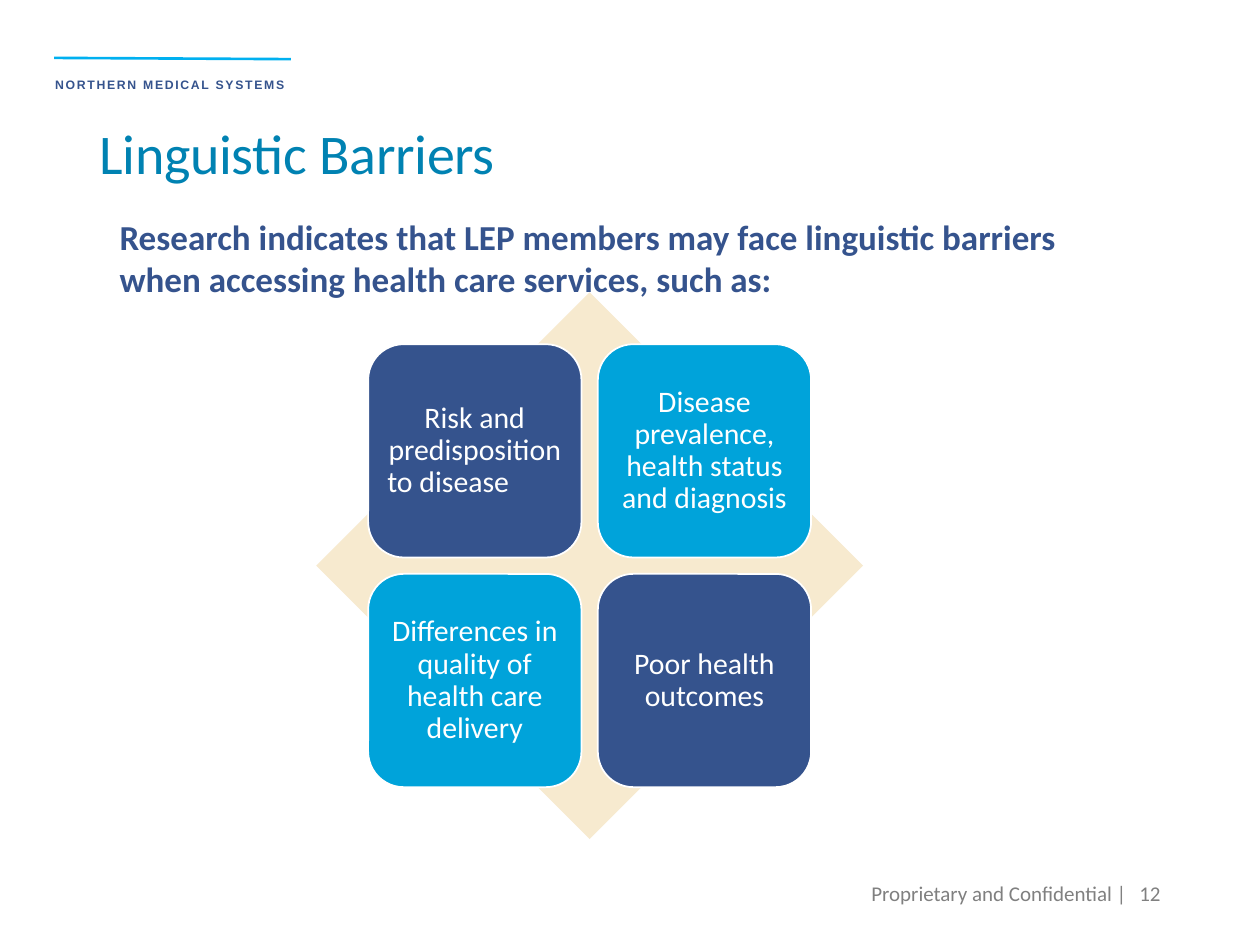
import pptx
import pptx.dml.color
import pptx.enum.shapes
import pptx.enum.text
import pptx.util
import lxml.etree

Pt = pptx.util.Pt
Shape = pptx.enum.shapes.MSO_SHAPE
Align = pptx.enum.text.PP_ALIGN
Anchor = pptx.enum.text.MSO_ANCHOR

NAVY, SKY, SAND, WHITE, GREY = "35538D", "00A3DA", "F7EACF", "FFFFFF", "808080"
MATRIX_LEFT, MATRIX_TOP, MATRIX_SIDE = 180.7, 167, 312.5
BARRIERS = [
    ("Risk and predisposition to disease \t", NAVY),
    ("Disease prevalence, health status and diagnosis", SKY),
    ("Differences in quality of health care delivery", SKY),
    ("Poor health outcomes", NAVY),
]


def rgb(color):
    """Turn a hex string into a colour."""
    return pptx.dml.color.RGBColor.from_string(color)


def write(frame, text, size, color, font="Calibri", bold=False,
          align=Align.LEFT, anchor=Anchor.TOP, line=None, tracking=0, wrap=True):
    """Fill a text frame with one styled paragraph."""
    frame.word_wrap = wrap
    frame.vertical_anchor = anchor
    paragraph = frame.paragraphs[0]
    run = paragraph.add_run()
    run.text = text
    paragraph.alignment = align
    if line:
        paragraph.line_spacing = line
    if tracking:
        run.font._element.set("spc", str(round(tracking * 100)))
    paragraph.font.size = Pt(size)
    paragraph.font.name = font
    paragraph.font.bold = bold
    paragraph.font.color.rgb = rgb(color)


def add_text(slide, box, text, size, color, **style):
    """Add a text box at left, top, width, height."""
    label = slide.shapes.add_textbox(*map(Pt, box))
    write(label.text_frame, text, size, color, **style)


def add_panel(slide, kind, box, fill, outline=None):
    """Add a flat filled shape, outlined if a colour is given."""
    panel = slide.shapes.add_shape(kind, *map(Pt, box))
    panel.shadow.inherit = False
    panel.fill.solid()
    panel.fill.fore_color.rgb = rgb(fill)
    if outline:
        panel.line.color.rgb = rgb(outline)
        panel.line.width = Pt(1)
    else:
        panel.line.fill.background()
    return panel


def add_rule(slide, ends, color, width):
    """Add a straight line without shadow."""
    rule = slide.shapes.add_connector(
        pptx.enum.shapes.MSO_CONNECTOR.STRAIGHT, *map(Pt, ends))
    rule.line.color.rgb = rgb(color)
    rule.line.width = Pt(width)
    properties = rule._element.spPr
    lxml.etree.SubElement(properties, pptx.oxml.ns.qn("a:effectLst"))


def add_matrix(slide):
    """Add the diamond with its two by two barrier tiles."""
    add_panel(slide, Shape.DIAMOND,
              (MATRIX_LEFT, MATRIX_TOP, MATRIX_SIDE, MATRIX_SIDE), SAND)
    margin, tile_side, pitch = (MATRIX_SIDE * part for part in (0.095, 0.39, 0.42))
    for index, (barrier, fill) in enumerate(BARRIERS):
        row, column = divmod(index, 2)
        box = (MATRIX_LEFT + margin + column * pitch,
               MATRIX_TOP + margin + row * pitch, tile_side, tile_side)
        frame = add_panel(slide, Shape.ROUNDED_RECTANGLE, box, fill, WHITE).text_frame
        frame.margin_left = frame.margin_right = Pt(5)
        frame.margin_top = frame.margin_bottom = Pt(5)
        write(frame, barrier, 17, WHITE, align=Align.CENTER,
              anchor=Anchor.MIDDLE, line=0.9)


def main():
    """Build and save the slide."""
    deck = pptx.Presentation()
    deck.slide_width, deck.slide_height = Pt(720), Pt(540)
    slide = deck.slides.add_slide(deck.slide_layouts[6])

    add_text(slide, (24.5, 33, 147, 21), "NORTHERN MEDICAL SYSTEMS", 7, NAVY,
             font="Arial", bold=True, line=Pt(16), tracking=1, wrap=False)
    add_rule(slide, (31, 33.1, 166.3, 33.8), "00B0F0", 1.5)
    add_matrix(slide)
    add_text(slide, (49.7, 60.5, 620.6, 49), "Linguistic Barriers", 32, "0082B2",
             anchor=Anchor.BOTTOM, line=0.8, tracking=-0.2)
    footer = {"align": Align.RIGHT, "anchor": Anchor.MIDDLE}
    add_text(slide, (407.5, 496, 243.4, 28.8), "Proprietary and Confidential |",
             12, GREY, **footer)
    add_text(slide, (637.2, 496, 33.1, 28.8), "12", 12, GREY, **footer)
    add_text(slide, (61.2, 119.5, 589, 77.8),
             "Research indicates that LEP members may face linguistic barriers "
             "when accessing health care services, such as:", 20, NAVY, bold=True)

    deck.save("out.pptx")


if __name__ == "__main__":
    main()
